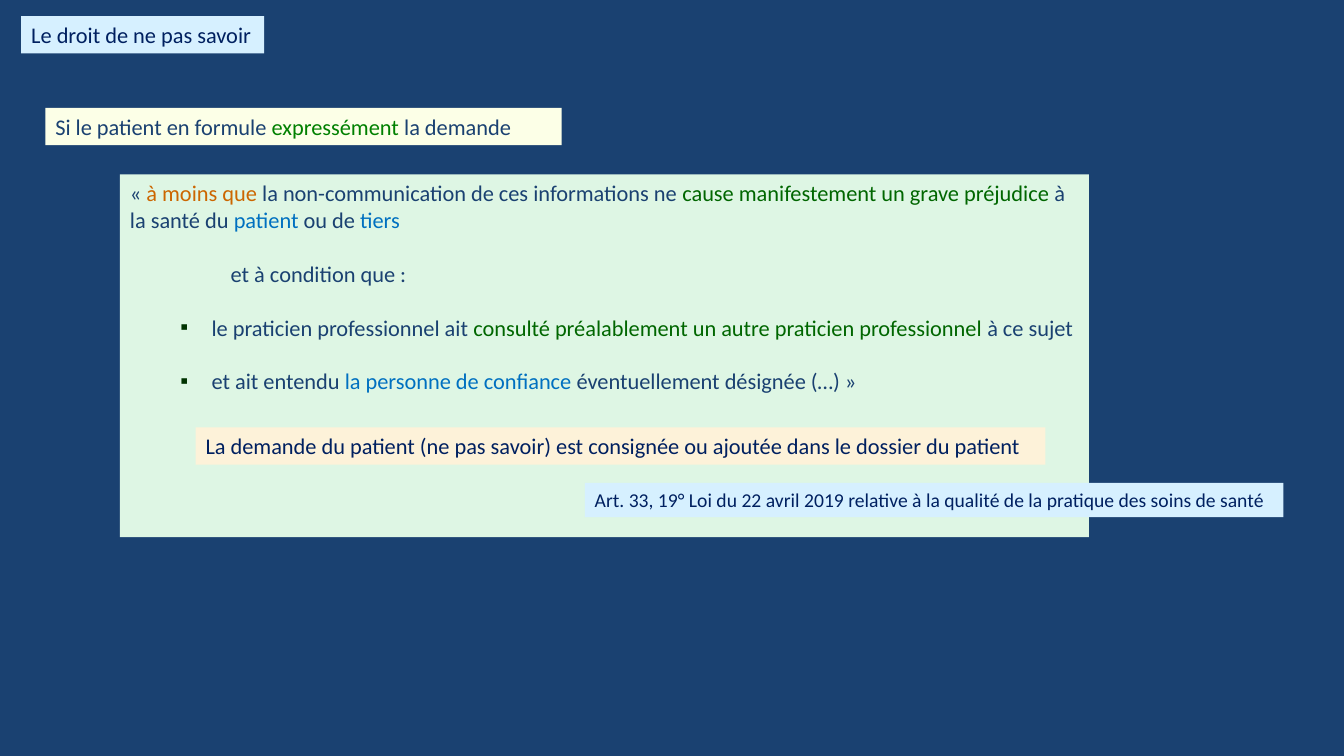
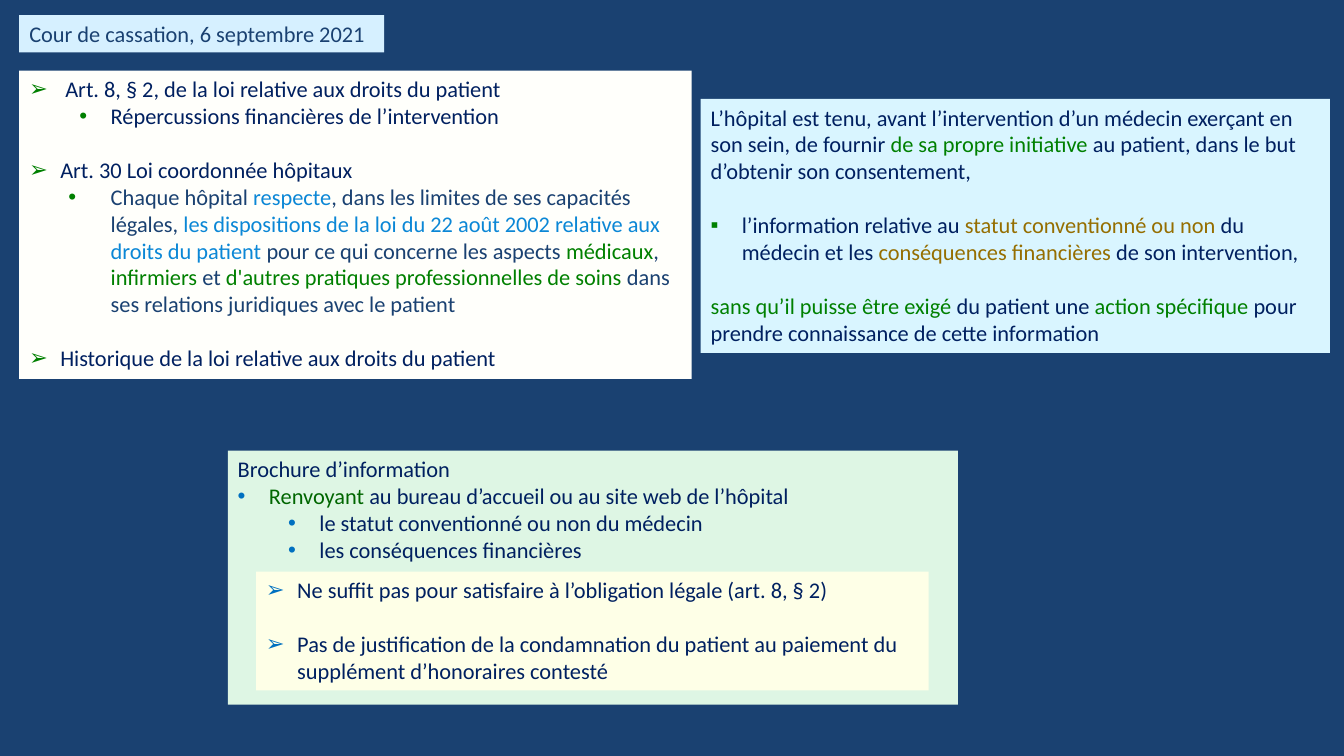
from dataclasses import dataclass

import pptx
import pptx.dml.color
import pptx.enum.shapes
import pptx.enum.text
import pptx.oxml.ns
import pptx.util
from lxml import etree

Inches = pptx.util.Inches


# Theme: colours, type and indents shared by both slides
@dataclass(frozen=True)
class Theme:
    font: str = "Calibri"
    body_size: int = 16
    caption_size: int = 14
    blank_line: float = 19.2
    background: str = "1A4171"
    slate: str = "1A4171"
    navy: str = "002060"
    green: str = "008000"
    dark_green: str = "006600"
    bullet_green: str = "003300"
    blue: str = "0070C0"
    sky: str = "0B87D6"
    orange: str = "CC6600"
    ochre: str = "956E01"
    pale_blue: str = "D6F0FF"
    ice: str = "D9F5FF"
    mint: str = "DEF6E4"
    cream: str = "FDF2D9"
    ivory: str = "FCFFE7"
    lemon: str = "FEFFE7"
    white: str = "FFFFFB"


THEME = Theme()
HANGING = 0.31
NESTED = 0.81
FRAME_FORMAT = {
    "word_wrap": True,
    "auto_size": pptx.enum.text.MSO_AUTO_SIZE.NONE,
    "vertical_anchor": pptx.enum.text.MSO_ANCHOR.TOP,
    "margin_left": Inches(0.1),
    "margin_right": Inches(0.1),
    "margin_top": Inches(0.05),
    "margin_bottom": Inches(0.05),
}


def rgb(colour):
    return pptx.dml.color.RGBColor.from_string(colour)


def apply_format(target, values):
    for name, value in values.items():
        setattr(target, name, value)


# Paragraph descriptions: runs are (text, colour) pairs
def text(*runs, left=0, gap=False):
    return {"runs": runs, "left": left, "gap": gap}


def item(character, colour, *runs, left=HANGING, hanging=HANGING, gap=False):
    return {"runs": runs, "left": left, "gap": gap,
            "bullet": (character, colour, hanging)}


def set_indent(paragraph, left, bullet):
    properties = paragraph._p.get_or_add_pPr()
    hanging = bullet[2] if bullet else 0
    properties.set("marL", str(Inches(left)))
    properties.set("indent", str(-Inches(hanging)))
    qn = pptx.oxml.ns.qn
    if not bullet:
        etree.SubElement(properties, qn("a:buNone"))
        return
    character, colour, _ = bullet
    bullet_colour = etree.SubElement(properties, qn("a:buClr"))
    etree.SubElement(bullet_colour, qn("a:srgbClr"), val=colour)
    etree.SubElement(properties, qn("a:buFont"), typeface="Arial")
    etree.SubElement(properties, qn("a:buChar"), char=character)


def write_paragraphs(frame, paragraphs, size):
    apply_format(frame, FRAME_FORMAT)
    for index, content in enumerate(paragraphs):
        paragraph = frame.add_paragraph() if index else frame.paragraphs[0]
        set_indent(paragraph, content["left"], content.get("bullet"))
        apply_format(paragraph, {
            "alignment": pptx.enum.text.PP_ALIGN.LEFT,
            "space_before": pptx.util.Pt(THEME.blank_line if content["gap"] else 0),
        })
        for words, colour in content["runs"]:
            run = paragraph.add_run()
            run.text = words
            apply_format(run.font, {"name": THEME.font, "size": pptx.util.Pt(size)})
            run.font.color.rgb = rgb(colour)


def fill_panel(shape, fill, paragraphs, size=THEME.body_size):
    shape.fill.solid()
    shape.fill.fore_color.rgb = rgb(fill)
    write_paragraphs(shape.text_frame, paragraphs, size)


def add_panel(slide, position, fill, *paragraphs, size=THEME.body_size):
    shape = slide.shapes.add_shape(
        pptx.enum.shapes.MSO_SHAPE.RECTANGLE, *map(Inches, position))
    shape.shadow.inherit = False
    shape.line.fill.background()
    fill_panel(shape, fill, paragraphs, size)


def add_titled_slide(presentation, title, colour, position):
    slide = presentation.slides.add_slide(presentation.slide_layouts[5])
    names = ("left", "top", "width", "height")
    apply_format(slide.shapes.title, dict(zip(names, map(Inches, position))))
    fill_panel(slide.shapes.title, THEME.pale_blue, [text((title, colour))])
    return slide


# Slide 1: the right not to know
def build_right_not_to_know(presentation):
    t = THEME
    slide = add_titled_slide(presentation, "Le droit de ne pas savoir", t.navy,
                             (0.21, 0.16, 2.41, 0.37))
    add_panel(slide, (0.45, 1.07, 5.12, 0.37), t.ivory, text(
        ("Si le patient en formule ", t.slate),
        ("expressément", t.green),
        (" la demande", t.slate)))
    add_panel(
        slide, (1.19, 1.73, 9.61, 3.6), t.mint,
        text(("« ", t.slate),
             ("à moins que ", t.orange),
             ("la non-communication de ces informations ne ", t.slate),
             ("cause manifestement un grave préjudice ", t.dark_green),
             ("à la santé du ", t.slate),
             ("patient", t.blue),
             (" ou de ", t.slate),
             ("tiers", t.blue)),
        text(("et à condition que :", t.slate), left=1, gap=True),
        item("▪", t.bullet_green,
             ("le praticien professionnel ait ", t.slate),
             ("consulté préalablement un autre praticien professionnel ", t.dark_green),
             ("à ce sujet", t.slate), left=NESTED, gap=True),
        item("▪", t.bullet_green,
             ("et ait entendu ", t.slate),
             ("la personne de confiance ", t.blue),
             ("éventuellement désignée (…) »", t.slate), left=NESTED, gap=True))
    add_panel(slide, (1.94, 4.24, 8.43, 0.37), t.cream, text(
        ("La demande du patient (ne pas savoir) est consignée ou ajoutée "
         "dans le dossier du patient", t.navy)))
    add_panel(slide, (5.8, 4.79, 6.93, 0.34), t.pale_blue, text(
        ("Art. 33, 19° Loi du 22 avril 2019 relative à la qualité de la "
         "pratique des soins de santé", t.navy)), size=t.caption_size)


# Slide 2: court ruling
def build_court_ruling(presentation):
    t = THEME
    slide = add_titled_slide(presentation, "Cour de cassation, 6 septembre 2021",
                             t.slate, (0.19, 0.15, 3.62, 0.37))
    # Legal basis
    add_panel(
        slide, (0.19, 0.7, 6.67, 3.06), t.white,
        item("➢", t.green,
             ("Art. 8, § 2, de la loi relative aux droits du patient", t.navy),
             left=0.36, hanging=0.36),
        item("•", t.green,
             ("Répercussions financières de l’intervention", t.navy), left=NESTED),
        item("➢", t.green, ("Art. 30 Loi coordonnée hôpitaux", t.navy), gap=True),
        item("•", t.green,
             ("Chaque hôpital ", t.slate),
             ("respecte", t.sky),
             (", dans les limites de ses capacités légales, ", t.slate),
             ("les dispositions de la loi du 22 août 2002 relative aux droits "
              "du patient ", t.sky),
             ("pour ce qui concerne les aspects ", t.slate),
             ("médicaux", t.green),
             (", ", t.slate),
             ("infirmiers", t.green),
             (" et ", t.slate),
             ("d'autres pratiques professionnelles de soins ", t.green),
             ("dans ses relations juridiques avec le patient", t.slate),
             left=NESTED, hanging=0.42),
        item("➢", t.green,
             ("Historique de la loi relative aux droits du patient", t.navy), gap=True))
    # Duty of the hospital
    add_panel(
        slide, (6.95, 0.98, 6.24, 2.52), t.ice,
        text(("L’hôpital est tenu, avant l’intervention d’un médecin exerçant en "
              "son sein, de fournir ", t.navy),
             ("de sa propre initiative ", t.green),
             ("au patient, dans le but d’obtenir son consentement,", t.navy)),
        item("▪", t.green,
             ("l’information relative au ", t.navy),
             ("statut conventionné ou non ", t.ochre),
             ("du médecin et les ", t.navy),
             ("conséquences financières ", t.ochre),
             ("de son intervention,", t.navy), gap=True),
        text(("sans qu’il puisse être exigé ", t.green),
             ("du patient une ", t.navy),
             ("action spécifique ", t.green),
             ("pour prendre connaissance de cette information", t.navy), gap=True))
    # Information brochure and its limits
    add_panel(
        slide, (2.26, 4.47, 7.24, 2.52), t.mint,
        text(("Brochure d’information", t.navy)),
        item("•", t.blue,
             ("Renvoyant", t.dark_green),
             (" au bureau d’accueil ou au site web de l’hôpital", t.navy)),
        item("•", t.blue,
             ("le statut conventionné ou non du médecin", t.navy), left=NESTED),
        item("•", t.blue, ("les conséquences financières", t.navy), left=NESTED))
    add_panel(
        slide, (2.54, 5.67, 6.67, 1.18), t.lemon,
        item("➢", t.blue,
             ("Ne suffit pas pour satisfaire à l’obligation légale (art. 8, § 2)",
              t.navy)),
        item("➢", t.blue,
             ("Pas de justification de la condamnation du patient au paiement du "
              "supplément d’honoraires contesté", t.navy), gap=True))


def main():
    presentation = pptx.Presentation()
    apply_format(presentation, {"slide_width": Inches(13.33),
                                "slide_height": Inches(7.5)})
    background = presentation.slide_master.background.fill
    background.solid()
    background.fore_color.rgb = rgb(THEME.background)
    build_right_not_to_know(presentation)
    build_court_ruling(presentation)
    presentation.save("out.pptx")


if __name__ == "__main__":
    main()
